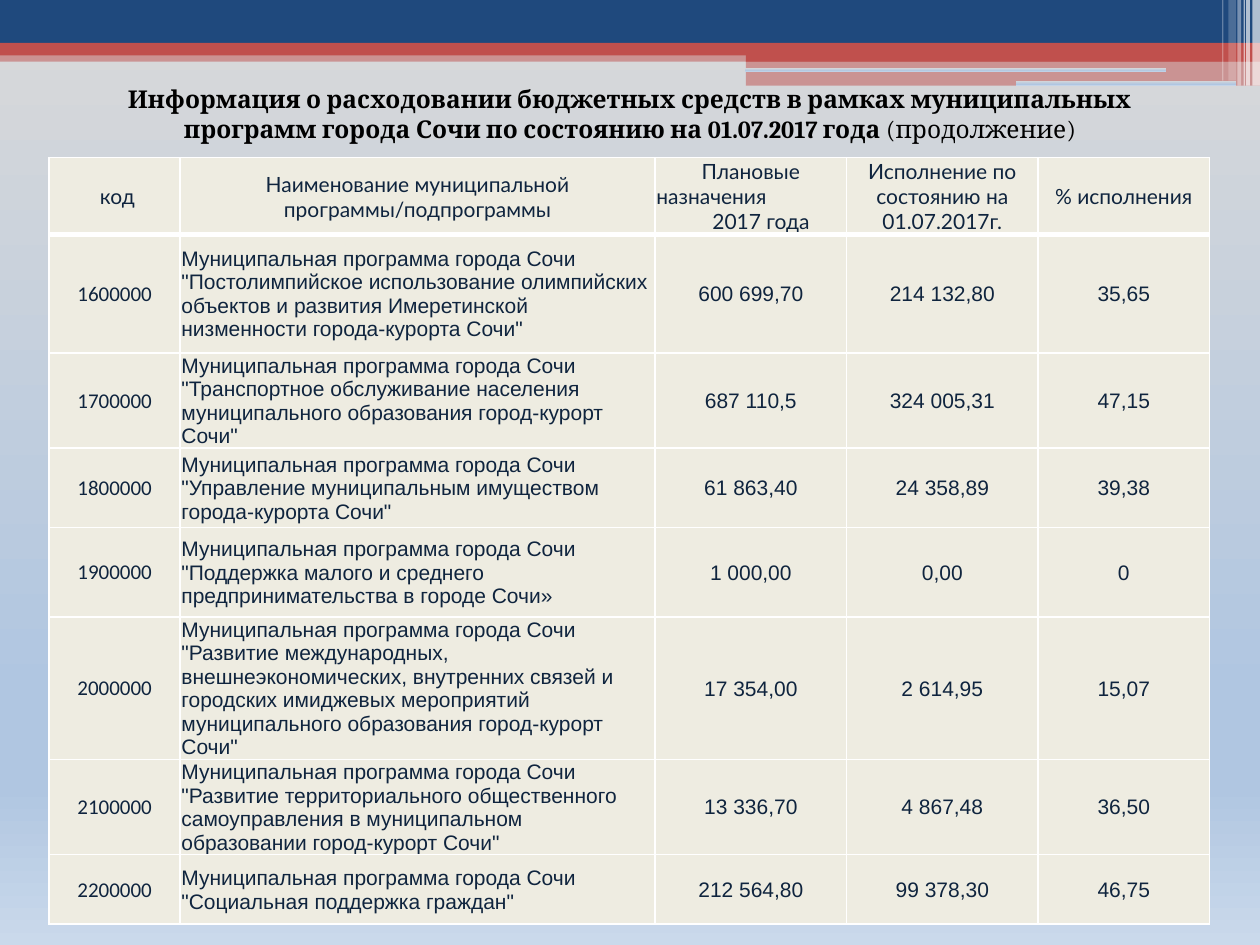
from lxml.etree import SubElement
from pptx import Presentation
from pptx.dml.color import RGBColor
from pptx.enum.shapes import MSO_SHAPE
from pptx.enum.text import MSO_ANCHOR, PP_ALIGN
from pptx.oxml.ns import qn
from pptx.util import Inches, Pt

RED, BLUE, WHITE, CREAM, NAVY = "C0504D", "1F497D", "FFFFFF", "EEECE1", "0F243E"
GRADIENT = [(0, "D9D9D9"), (74, "B0C6E1"), (83, "B0C6E1"), (100, "CAD9EB")]
BANDS = [
    (0, 0.4, 10, 0.09, RED, 50),
    (0, 0, 10, 0.34, BLUE, 100),
    (0, 0.34, 10, 0.1, RED, 100),
    (5.92, 0.39, 4.08, 0.1, RED, 100),
    (5.92, 0.48, 4.08, 0.2, RED, 50),
]
SLITS = [(5.91, 0.54, 3.35, 0.03), (8.06, 0.64, 1.75, 0.04)]
STRIPES = [
    (9.94, 0.06, 0.68, 65),
    (9.89, 0.03, 0.68, 65),
    (9.87, 0.01, 0.68, 60),
    (9.82, 0.03, 0.68, 40),
    (9.75, 0.06, 0.64, 20),
    (9.7, 0.01, 0.64, 30),
]
TITLE = [
    ("Информация о расходовании бюджетных средств в рамках муниципальных "
     "программ города Сочи по состоянию на 01.07.2017 года ", True),
    ("(продолжение)", False),
]
HEADER = [
    "\u00a0код".replace("\u00a0", " "),
    "Наименование муниципальной программы/подпрограммы",
    "Плановые\nназначения\n2017 года",
    "Исполнение по состоянию на 01.07.2017г.",
    "% исполнения",
]
PREFIX = "Муниципальная программа города Сочи "
PROGRAMS = [
    ("1600000", '"Постолимпийское использование олимпийских объектов и развития '
     'Имеретинской низменности города-курорта Сочи"', "600 699,70", "214 132,80", "35,65"),
    ("1700000", '"Транспортное обслуживание населения муниципального образования '
     'город-курорт Сочи"', "687 110,5", "324 005,31", "47,15"),
    ("1800000", '"Управление муниципальным имуществом города-курорта Сочи"',
     "61 863,40", "24 358,89", "39,38"),
    ("1900000", '"Поддержка малого и среднего предпринимательства в городе Сочи»',
     "1 000,00", "0,00", "0"),
    ("2000000", '"Развитие международных, внешнеэкономических, внутренних связей и '
     'городских имиджевых мероприятий муниципального образования город-курорт Сочи"',
     "17 354,00", "2 614,95", "15,07"),
    ("2100000", '"Развитие территориального общественного самоуправления в '
     'муниципальном образовании город-курорт Сочи"', "13 336,70", "4 867,48", "36,50"),
    ("2200000", '"Социальная поддержка граждан"', "212 564,80", "99 378,30", "46,75"),
]
COLS = [1.04, 3.77, 1.52, 1.52, 1.36]
ROWS = [0.61, 0.94, 0.75, 0.63, 0.71, 1.13, 0.75, 0.55]


def rgb(color):
    return RGBColor.from_string(color)


def set_gradient(fill, pr):
    fill.gradient()
    grad = pr.find(qn("a:gradFill"))
    for child in list(grad):
        grad.remove(child)
    stops = SubElement(grad, qn("a:gsLst"))
    for pos, color in GRADIENT:
        stop = SubElement(stops, qn("a:gs"), pos=str(pos * 1000))
        SubElement(stop, qn("a:srgbClr"), val=color)
    SubElement(grad, qn("a:lin"), ang="5400000", scaled="0")


def add_bar(slide, x, y, w, h, kind=MSO_SHAPE.RECTANGLE):
    sp = slide.shapes.add_shape(kind, Inches(x), Inches(y), Inches(w), Inches(h))
    sp.shadow.inherit = False
    sp.line.fill.background()
    return sp


def add_solid_bar(slide, x, y, w, h, color, alpha):
    sp = add_bar(slide, x, y, w, h)
    sp.fill.solid()
    sp.fill.fore_color.rgb = rgb(color)
    if alpha < 100:
        clr = sp.element.spPr.find(qn("a:solidFill"))[0]
        SubElement(clr, qn("a:alpha"), val=str(alpha * 1000))


def set_borders(cell, bottom):
    tc_pr = cell._tc.get_or_add_tcPr()
    for side, width in (("L", 1), ("R", 1), ("T", 1), ("B", bottom)):
        ln = SubElement(tc_pr, qn(f"a:ln{side}"), w=str(Pt(width)))
        SubElement(SubElement(ln, qn("a:solidFill")), qn("a:srgbClr"), val=WHITE)


def style_cell(cell, text, font, align, bottom):
    cell.text = text
    cell.vertical_anchor = MSO_ANCHOR.MIDDLE
    cell.margin_left = cell.margin_right = cell.margin_top = Inches(0.01)
    cell.margin_bottom = 0
    set_borders(cell, bottom)
    cell.fill.solid()
    cell.fill.fore_color.rgb = rgb(CREAM)
    for p in cell.text_frame.paragraphs:
        p.alignment = align
        for r in p.runs:
            r.font.name, r.font.size, r.font.bold = font, Pt(12), False
            r.font.color.rgb = rgb(NAVY)


def add_program_table(slide):
    frame = slide.shapes.add_table(
        len(ROWS), len(COLS), Inches(0.39), Inches(1.25), Inches(sum(COLS)), Inches(sum(ROWS)))
    table = frame.table
    table.first_row = table.horz_banding = False
    for col, width in zip(table.columns, COLS):
        col.width = Inches(width)
    for row, height in zip(table.rows, ROWS):
        row.height = Inches(height)
    for c, text in enumerate(HEADER):
        style_cell(table.cell(0, c), text, "Lato", PP_ALIGN.CENTER, 3)
    for i, (code, name, *amounts) in enumerate(PROGRAMS, 1):
        for c, text in enumerate([code, PREFIX + name, *amounts]):
            font = "Calibri" if c == 0 else "Arial"
            align = PP_ALIGN.LEFT if c == 1 else PP_ALIGN.CENTER
            style_cell(table.cell(i, c), text, font, align, 1)
    plan = table.cell(0, 2).text_frame.paragraphs
    plan[1].alignment = PP_ALIGN.LEFT
    plan[2]._p.get_or_add_pPr().set("marL", str(Inches(0.16)))


def add_title(slide):
    tf = slide.shapes.add_textbox(Inches(0.55), Inches(0.62), Inches(8.9), Inches(0.57)).text_frame
    tf.word_wrap = True
    p = tf.paragraphs[0]
    p.alignment = PP_ALIGN.CENTER
    for text, bold in TITLE:
        r = p.add_run()
        r.text = text
        r.font.name, r.font.size, r.font.bold = "Cambria", Pt(14), bold
        r.font.color.rgb = rgb("000000")


def main():
    prs = Presentation()
    prs.slide_width, prs.slide_height = Inches(10), Inches(7.5)
    s = prs.slides.add_slide(prs.slide_layouts[6])
    fill = s.background.fill
    set_gradient(fill, s.element.cSld.find(qn("p:bg")).find(qn("p:bgPr")))
    for band in BANDS:
        add_solid_bar(s, *band)
    for slit in SLITS:
        sp = add_bar(s, *slit, MSO_SHAPE.ROUNDED_RECTANGLE)
        set_gradient(sp.fill, sp.element.spPr)
    for x, w, h, alpha in STRIPES:
        add_solid_bar(s, x, 0, w, h, WHITE, alpha)
    add_program_table(s)
    add_title(s)
    prs.save("out.pptx")


if __name__ == "__main__":
    main()
